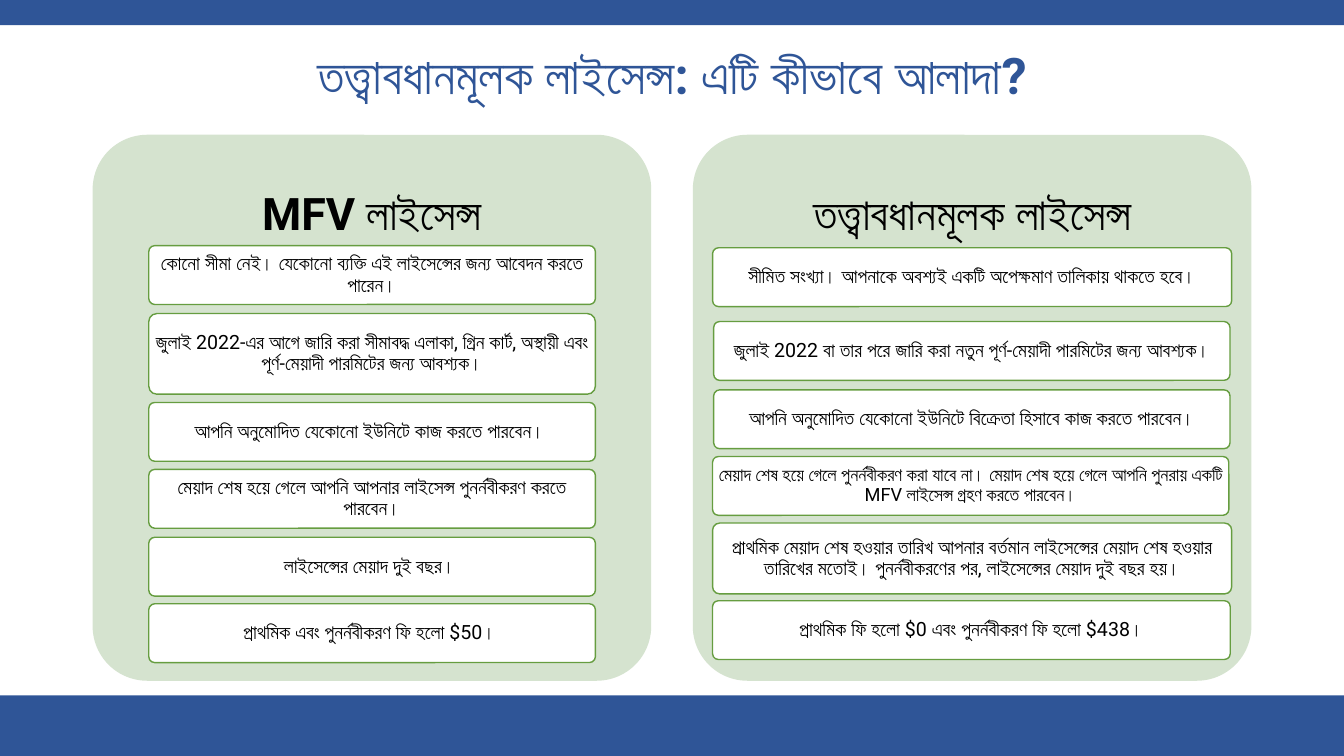
from pptx import Presentation
from pptx.dml.color import RGBColor
from pptx.enum.shapes import MSO_SHAPE
from pptx.enum.text import MSO_ANCHOR, PP_ALIGN
from pptx.oxml.ns import qn
from pptx.util import Pt
from lxml import etree

RECT = MSO_SHAPE.RECTANGLE
ROUND = MSO_SHAPE.ROUNDED_RECTANGLE
MIDDLE = MSO_ANCHOR.MIDDLE
CENTER = PP_ALIGN.CENTER

FONT = "Roboto"
BLUE, PALE, GREEN = "2F5597", "D5E3CF", "669D40"
WHITE, BLACK = "FFFFFF", "000000"
WIDE, HIGH = 960, 540
TOP, PANEL_W, PANEL_H = 96.3, 399, 390

TITLE = "তত্ত্বাবধানমূলক লাইসেন্স: এটি কীভাবে আলাদা?"
BARS = [(0, 18), (496.8, 43.2)]
PANELS = [
    (66.2, "MFV লাইসেন্স", [
        (106.3, 175.5, 319, 42, 14, "কোনো সীমা নেই। যেকোনো ব্যক্তি এই লাইসেন্সের জন্য আবেদন করতে পারেন।"),
        (106.3, 224, 319, 57.6, 14, "জুলাই 2022-এর আগে জারি করা সীমাবদ্ধ এলাকা, গ্রিন কার্ট, অস্থায়ী এবং পূর্ণ-মেয়াদী পারমিটের জন্য আবশ্যক।"),
        (106.3, 287.5, 319, 42, 14, "আপনি অনুমোদিত যেকোনো ইউনিটে কাজ করতে পারবেন। "),
        (106.3, 335.3, 319, 42, 14, "মেয়াদ শেষ হয়ে গেলে আপনি আপনার লাইসেন্স পুনর্নবীকরণ করতে পারবেন।"),
        (106.3, 383.8, 319, 42, 14, "লাইসেন্সের মেয়াদ দুই বছর। "),
        (106.3, 431.3, 319, 42, 14, "প্রাথমিক এবং পুনর্নবীকরণ ফি হলো $50। "),
    ]),
    (494.9, "তত্ত্বাবধানমূলক লাইসেন্স", [
        (509, 177, 370.8, 42, 14, "সীমিত সংখ্যা। আপনাকে অবশ্যই একটি অপেক্ষমাণ তালিকায় থাকতে হবে।"),
        (509.8, 229.7, 368.8, 42, 14, "জুলাই 2022 বা তার পরে জারি করা নতুন পূর্ণ-মেয়াদী পারমিটের জন্য আবশ্যক।"),
        (509.8, 278.5, 368.8, 42, 14, "আপনি অনুমোদিত যেকোনো ইউনিটে বিক্রেতা হিসাবে কাজ করতে পারবেন।"),
        (509, 326.1, 368.8, 42, 13, "মেয়াদ শেষ হয়ে গেলে পুনর্নবীকরণ করা যাবে না। মেয়াদ শেষ হয়ে গেলে আপনি পুনরায় একটি MFV লাইসেন্স গ্রহণ করতে পারবেন।"),
        (509, 373.6, 370.8, 50.6, 14, "প্রাথমিক মেয়াদ শেষ হওয়ার তারিখ আপনার বর্তমান লাইসেন্সের মেয়াদ শেষ হওয়ার তারিখের মতোই। পুনর্নবীকরণের পর, লাইসেন্সের মেয়াদ দুই বছর হয়।"),
        (509, 429.1, 369.8, 42, 14, "প্রাথমিক ফি হলো $0 এবং পুনর্নবীকরণ ফি হলো $438।"),
    ]),
]


def color(code):
    return RGBColor.from_string(code)


def write(shape, text, size, tone, bold=False):
    frame = shape.text_frame
    frame.text = text
    frame.word_wrap = True
    frame.vertical_anchor = MIDDLE
    para = frame.paragraphs[0]
    para.alignment = CENTER
    para.line_spacing = 0.9
    for run in para.runs:
        font = run.font
        font.name, font.size, font.bold = FONT, Pt(size), bold
        font.color.rgb = color(tone)
        props = run._r.get_or_add_rPr()
        etree.SubElement(props, qn("a:cs")).set("typeface", FONT)


def pad(shape, side, top, base):
    frame = shape.text_frame
    frame.margin_left = frame.margin_right = Pt(side)
    frame.margin_top, frame.margin_bottom = Pt(top), Pt(base)


def block(kind, left, top, width, height, fill, line=None):
    shape = slide.shapes.add_shape(kind, Pt(left), Pt(top), Pt(width), Pt(height))
    shape.shadow.inherit = False
    shape.fill.solid()
    shape.fill.fore_color.rgb = color(fill)
    if kind == ROUND:
        shape.adjustments[0] = 0.1
    if line:
        shape.line.color.rgb = color(line)
        shape.line.width = Pt(1)
    else:
        shape.line.fill.background()
    return shape


deck = Presentation()
deck.slide_width, deck.slide_height = Pt(WIDE), Pt(HIGH)
slide = deck.slides.add_slide(deck.slide_layouts[5])

for top, height in BARS:
    block(RECT, 0, top, WIDE, height, BLUE)

title = slide.shapes.title
title.left, title.top, title.width, title.height = Pt(66), Pt(28.8), Pt(828), Pt(54)
write(title, TITLE, 36, BLUE, True)

for left, head, rows in PANELS:
    panel = block(ROUND, left, TOP, PANEL_W, PANEL_H, PALE)
    pad(panel, 9.6, 9.6, 283)
    write(panel, head, 32, BLACK, True)
    for x, y, width, height, size, text in rows:
        card = block(ROUND, x, y, width, height, WHITE, GREEN)
        pad(card, 3, 2.4, 2.4)
        write(card, text, size, BLACK)

deck.save("out.pptx")
